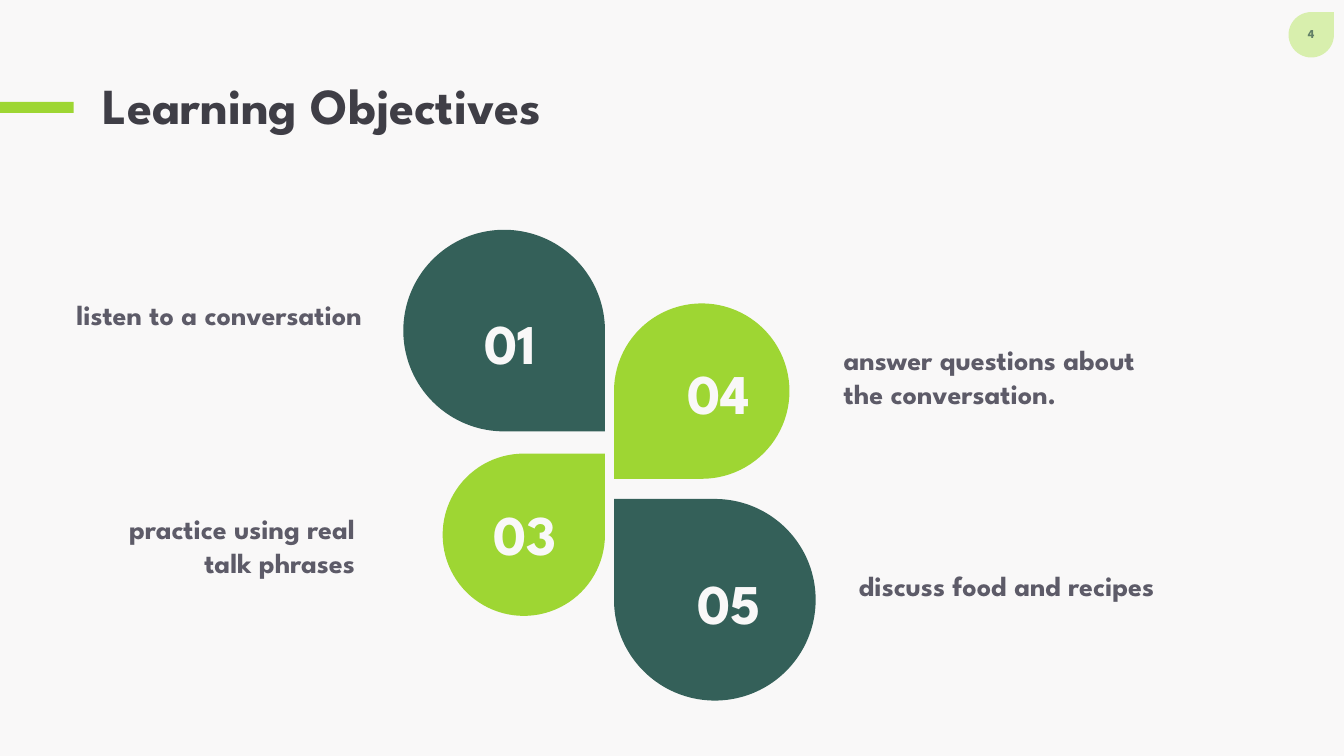
from dataclasses import dataclass

from lxml import etree
from pptx import Presentation
from pptx.dml import color as dml
from pptx.enum import shapes, text
from pptx.oxml import ns
from pptx.util import Inches, Pt

FONT = "League Spartan"
COLOURS = {
    "paper": "F9F8F8",
    "title": "3F3E46",
    "body": "5D5B68",
    "dark": "346059",
    "lime": "9ED633",
    "pale": "D8EFAD",
    "number": "274843",
}
LEFT, CENTRE, RIGHT = text.PP_ALIGN.LEFT, text.PP_ALIGN.CENTER, text.PP_ALIGN.RIGHT
Area = tuple[float, float, float, float]


@dataclass(frozen=True)
class Petal:
    left: float
    top: float
    size: float
    turn: int
    colour: str


@dataclass(frozen=True)
class Objective:
    number: str
    number_at: tuple[float, float]
    wording: str
    area: Area
    align: text.PP_ALIGN = LEFT


FLOWER_SIDES = [
    [Petal(4, 2.28, 2, 90, "dark"), Petal(4.39, 4.5, 1.61, 0, "lime")],
    [Petal(6.09, 4.95, 2, 270, "dark"), Petal(6.09, 3.01, 1.74, 180, "lime")],
]
OBJECTIVES = [
    Objective("01", (4.54, 3.01), "listen to a conversation", (0.66, 2.9, 3.58, 0.44)),
    Objective("03", (4.75, 4.91), "practice using real talk phrases",
              (0.66, 5.03, 2.96, 0.77), RIGHT),
    Objective("04", (6.67, 3.51), "answer questions about the conversation.",
              (8.27, 3.35, 3.34, 1.11)),
    Objective("05", (6.77, 5.59), "discuss food and recipes", (8.42, 5.59, 3.19, 0.77)),
]


def rgb(name: str) -> dml.RGBColor:
    return dml.RGBColor.from_string(COLOURS[name])


def add_filled(parent, kind: shapes.MSO_SHAPE, area: Area, colour: str, turn: int = 0) -> None:
    """Draw a flat preset shape on a slide's or group's shapes."""
    shape = parent.add_shape(kind, *map(Inches, area))
    shape.rotation = turn
    shape.shadow.inherit = False
    shape.fill.solid()
    shape.fill.fore_color.rgb = rgb(colour)
    shape.line.fill.background()


def add_text(page, wording: str, area: Area, *, size: float, colour: str,
             align: text.PP_ALIGN = LEFT, anchor: text.MSO_ANCHOR = text.MSO_ANCHOR.TOP,
             spacing: float = 1.0, grow: bool = True, opacity: int = 100) -> None:
    box = page.shapes.add_textbox(*map(Inches, area))
    frame = box.text_frame
    frame.word_wrap = True
    frame.vertical_anchor = anchor
    frame.auto_size = (text.MSO_AUTO_SIZE.SHAPE_TO_FIT_TEXT if grow
                       else text.MSO_AUTO_SIZE.NONE)
    para = frame.paragraphs[0]
    para.alignment = align
    para.line_spacing = spacing
    span = para.add_run()
    span.text = wording
    span.font.name = FONT
    span.font.size = Pt(size)
    span.font.bold = True
    span.font.color.rgb = rgb(colour)
    if opacity < 100:
        tint = span.font.fill._xPr.find(".//" + ns.qn("a:srgbClr"))
        etree.SubElement(tint, ns.qn("a:alpha")).set("val", str(opacity * 1000))


def add_header(page) -> None:
    add_filled(page.shapes, shapes.MSO_SHAPE.TEAR, (12.78, 0.12, 0.45, 0.45), "pale")
    add_text(page, "4", (12.78, 0.21, 0.45, 0.27), size=9, colour="number",
             align=CENTRE, grow=False, opacity=65)
    add_filled(page.shapes, shapes.MSO_SHAPE.RECTANGLE, (0, 1.01, 0.73, 0.11), "lime")
    add_text(page, "Learning Objectives", (0.92, 0.4, 9.9, 1.34), size=36, colour="title",
             anchor=text.MSO_ANCHOR.MIDDLE, spacing=0.9, grow=False)


def main() -> None:
    deck = Presentation()
    deck.slide_width, deck.slide_height = Inches(13.33), Inches(7.5)
    page = deck.slides.add_slide(deck.slide_layouts[6])
    page.background.fill.solid()
    page.background.fill.fore_color.rgb = rgb("paper")

    add_header(page)
    for side in FLOWER_SIDES:
        group = page.shapes.add_group_shape()
        for petal in side:
            add_filled(group.shapes, shapes.MSO_SHAPE.TEAR,
                       (petal.left, petal.top, petal.size, petal.size),
                       petal.colour, petal.turn)
    for goal in OBJECTIVES:
        add_text(page, goal.number, (*goal.number_at, 0.87, 0.77), size=40,
                 colour="paper", align=RIGHT)
        add_text(page, goal.wording, goal.area, size=20, colour="body", align=goal.align)
    deck.save("out.pptx")


if __name__ == "__main__":
    main()
